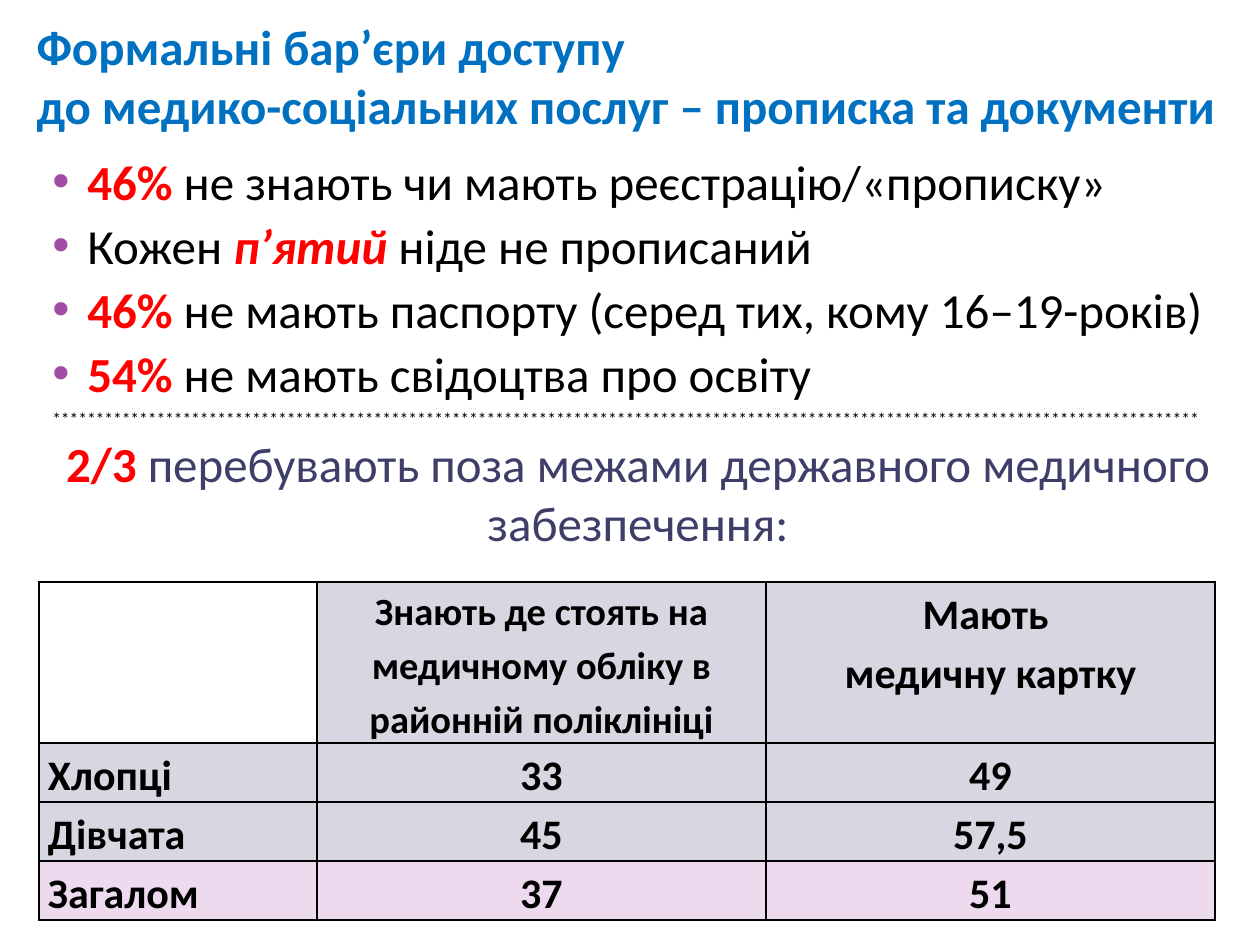
import pptx
import pptx.util
import pptx.dml.color
import pptx.enum.text
import pptx.oxml
import pptx.oxml.ns
from lxml import etree

PX = 914400 / 126  # one px in EMU
FONT = "Calibri"
HUES = {
    "blue": "0070C0", "red": "FF0000", "black": "000000", "navy": "3E3F68",
    "plum": "A04DA3", "white": "FFFFFF", "gray": "D6D7E0", "pink": "EDDAEE",
}
ALIGN = pptx.enum.text.PP_ALIGN

TITLE = [
    "Формальні бар’єри доступу ",
    "до медико-соціальних послуг – прописка та документи",
]
FACTS = [
    [("46% ", "b"), ("не знають чи мають реєстрацію/«прописку»", "")],
    [("Кожен ", ""), ("п’ятий ", "bi"), ("ніде не прописаний", "")],
    [("46% ", "b"), ("не мають паспорту (серед тих, кому 16–19-років)", "")],
    [("54% ", "b"), ("не мають свідоцтва про освіту", "")],
]
HEADS = [
    ["Знають де стоять на медичному обліку в районній поліклініці"],
    ["Мають ", "медичну картку"],
]
ROWS = [
    ("Хлопці", "33", "49", "gray"),
    ("Дівчата", "45", "57,5", "gray"),
    ("Загалом", "37", "51", "pink"),
]


def px(num):
    return pptx.util.Emu(round(num * PX))


def tint(name):
    return pptx.dml.color.RGBColor.from_string(HUES[name])


def write(par, text, size=28, hue="black", bold=False, slant=False):
    """Add a run of text with its format."""
    run = par.add_run()
    run.text = text
    font = run.font
    font.name, font.size = FONT, pptx.util.Pt(size)
    font.bold, font.italic = bold, slant
    font.color.rgb = tint(hue)


def place(shape, left, top, width, height):
    shape.left, shape.top = px(left), px(top)
    shape.width, shape.height = px(width), px(height)


def next_par(frame, first):
    return frame.paragraphs[0] if first else frame.add_paragraph()


def indent(par, left, hang=0, mark=None):
    """Set the indent and an optional coloured bullet."""
    props = par._p.get_or_add_pPr()
    props.set("marL", str(px(left)))
    props.set("indent", str(px(hang)))
    if mark:
        qn = pptx.oxml.ns.qn
        color = etree.SubElement(props, qn("a:buClr"))
        etree.SubElement(color, qn("a:srgbClr"), val=HUES[mark])
        etree.SubElement(props, qn("a:buFont"), typeface="Arial")
        etree.SubElement(props, qn("a:buChar"), char="•")


def add_title(slide):
    title = slide.shapes.title
    place(title, 24, 16, 1235, 118)
    frame = title.text_frame
    frame.word_wrap = True
    frame.auto_size = pptx.enum.text.MSO_AUTO_SIZE.NONE
    frame.vertical_anchor = pptx.enum.text.MSO_ANCHOR.MIDDLE
    par = frame.paragraphs[0]
    par.alignment = ALIGN.LEFT
    for num, line in enumerate(TITLE):
        if num:
            par.add_line_break()
        write(par, line, hue="blue", bold=True)


def add_body(slide):
    box = slide.shapes.add_textbox(px(25), px(145), px(1211), px(430))
    frame = box.text_frame
    frame.word_wrap = True
    # Bulleted facts
    for num, fact in enumerate(FACTS):
        par = next_par(frame, num == 0)
        par.space_before = pptx.util.Pt(3)
        indent(par, 50, -35, "plum")
        for text, style in fact:
            write(par, text, hue="red" if style else "black",
                  bold="b" in style, slant="i" in style)
    # Row of stars
    stars = frame.add_paragraph()
    write(stars, "*" * 132, size=10)
    # Lead-in to the table
    lead = frame.add_paragraph()
    lead.alignment = ALIGN.CENTER
    write(lead, "2/3 ", hue="red", bold=True)
    write(lead, "перебувають поза межами державного медичного забезпечення:",
          hue="navy")
    for par in (stars, lead):
        par.space_before = pptx.util.Pt(3)
        indent(par, 15)


def edge(cell):
    """Draw thin black borders on a cell; they precede its fill."""
    props = cell._tc.get_or_add_tcPr()
    for num, side in enumerate(("lnL", "lnR", "lnT", "lnB")):
        props.insert(num, pptx.oxml.parse_xml(
            f'<a:{side} {pptx.oxml.ns.nsdecls("a")} w="12700"><a:solidFill>'
            f'<a:srgbClr val="{HUES["black"]}"/></a:solidFill></a:{side}>'))


def fill_cell(cell, lines, hue, size=24, align=ALIGN.CENTER):
    cell.margin_left = cell.margin_right = px(9)
    cell.margin_top = cell.margin_bottom = 0
    cell.fill.solid()
    cell.fill.fore_color.rgb = tint(hue)
    edge(cell)
    for num, line in enumerate(lines):
        par = next_par(cell.text_frame, num == 0)
        par.alignment, par.line_spacing = align, 1.15
        write(par, line, size=size, bold=True)


def add_grid(slide):
    frame = slide.shapes.add_table(4, 3, px(39), px(582), px(1176), px(338))
    grid = frame.table
    for col, width in zip(grid.columns, (278, 449, 449)):
        col.width = px(width)
    for row, height in zip(grid.rows, (161, 59, 59, 59)):
        row.height = px(height)
    # Header row
    fill_cell(grid.cell(0, 0), [], "white")
    for col, (lines, size) in enumerate(zip(HEADS, (22, 24)), 1):
        fill_cell(grid.cell(0, col), lines, "gray", size)
    # Data rows
    for row, (*texts, hue) in enumerate(ROWS, 1):
        for col, text in enumerate(texts):
            align = ALIGN.CENTER if col else ALIGN.LEFT
            fill_cell(grid.cell(row, col), [text], hue, align=align)


def main():
    deck = pptx.Presentation()
    deck.slide_width, deck.slide_height = px(1260), px(945)
    slide = deck.slides.add_slide(deck.slide_layouts[5])
    add_title(slide)
    add_body(slide)
    add_grid(slide)
    deck.save("out.pptx")


if __name__ == "__main__":
    main()
